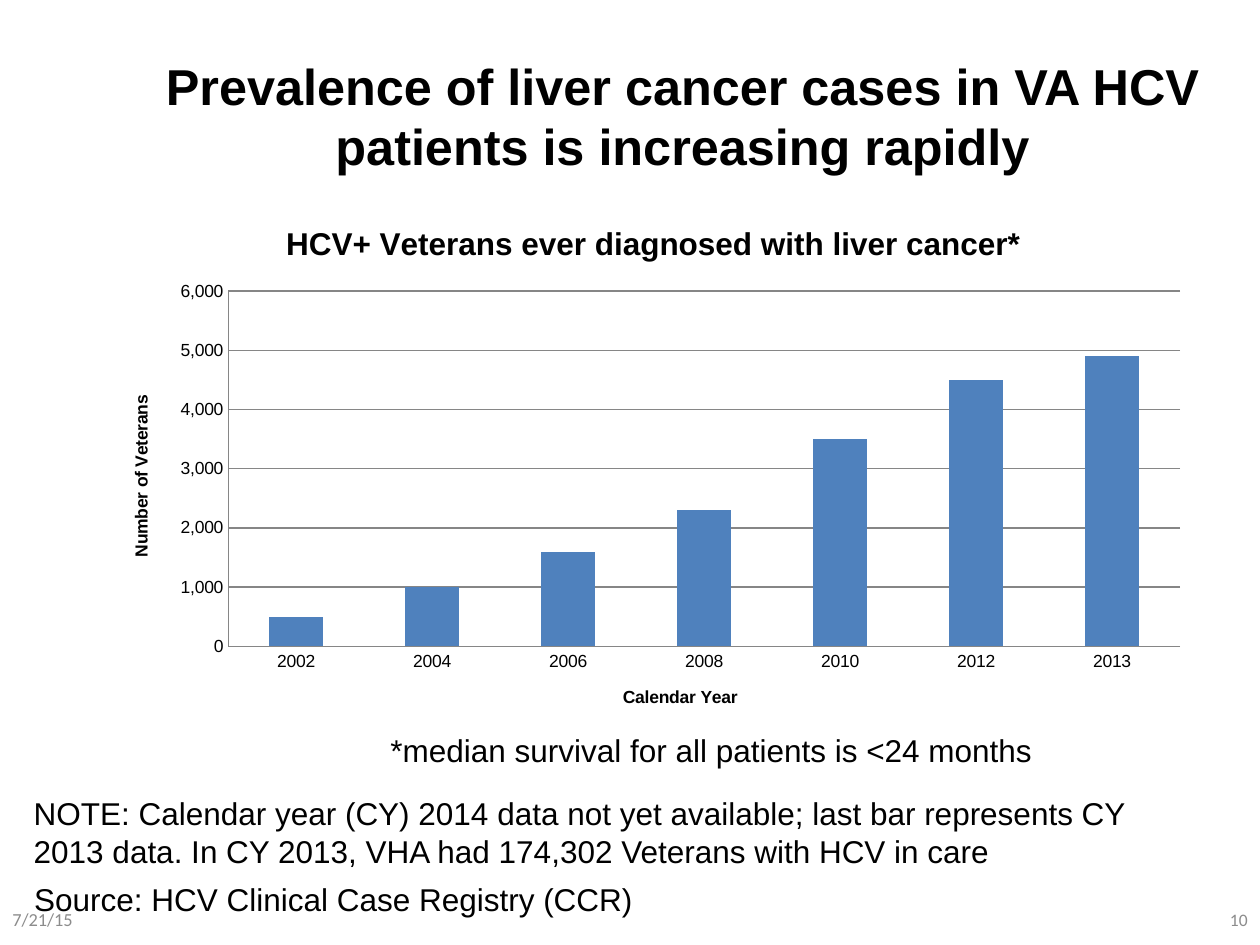
"""Build a slide on the rising prevalence of liver cancer among HCV patients."""
from lxml.etree import SubElement
from pptx import Presentation
from pptx.chart.data import CategoryChartData
from pptx.dml.color import RGBColor
from pptx.enum.chart import XL_CHART_TYPE, XL_TICK_MARK
from pptx.enum.text import MSO_ANCHOR, PP_ALIGN
from pptx.oxml.ns import qn
from pptx.util import Cm, Pt

COLORS = {"text": "000000", "footer": "8C8C8C", "bar": "4F81BD", "line": "868686"}

TOP, MIDDLE = MSO_ANCHOR.TOP, MSO_ANCHOR.MIDDLE
LEFT, CENTER, RIGHT = PP_ALIGN.LEFT, PP_ALIGN.CENTER, PP_ALIGN.RIGHT
HEADING = ("Arial", 28.8, True, "text")
BODY = ("Arial", 18, False, "text")
DATE = ("Calibri", 10.5, False, "footer")
NUMBER = ("Calibri", 10, False, "footer")

TEXTS = [
    ("Prevalence of liver cancer cases in VA HCV patients is increasing rapidly",
     (2.97, 0.84, 21.59, 2.97), HEADING, CENTER, MIDDLE),
    ("*median survival for all patients is <24 months",
     (7.62, 14.61, 13.54, 1.02), BODY, LEFT, TOP),
    ("NOTE: Calendar year (CY) 2014 data not yet available; last bar represents CY "
     "2013 data. In CY 2013, VHA had 174,302 Veterans with HCV in care",
     (0.43, 15.88, 23.93, 1.8), BODY, LEFT, TOP),
    ("10", (19.48, 18.03, 5.92, 1.02), NUMBER, RIGHT, MIDDLE),
    ("7/21/15", (0, 18.03, 5.92, 1.02), DATE, LEFT, MIDDLE),
    ("Source: HCV Clinical Case Registry (CCR)",
     (0.44, 17.62, 22.83, 1.02), BODY, LEFT, MIDDLE),
]

CHART_TITLE = "HCV+ Veterans ever diagnosed with liver cancer*"
CHART_BOX = (2.11, 4.02, 22.12, 10.8)
PLOT_BOX = (4.6, 5.87, 19.19, 7.16)
YEAR_TITLE = ("Calendar Year", (12.49, 13.76))
COUNT_TITLE = ("Number of Veterans", (2.55, 7.9))
VETERANS = {"2002": 500, "2004": 1000, "2006": 1600, "2008": 2300,
            "2010": 3500, "2012": 4500, "2013": 4900}


def color(name):
    return RGBColor.from_string(COLORS[name])


def style(font, face, size, bold, color_name):
    font.name, font.size, font.bold = face, Pt(size), bold
    font.color.rgb = color(color_name)


def add_text(slide, words, box, look, align, anchor):
    frame = slide.shapes.add_textbox(*map(Cm, box)).text_frame
    frame.word_wrap = True
    frame.vertical_anchor = anchor
    paragraph = frame.paragraphs[0]
    paragraph.text = words
    paragraph.alignment = align
    style(paragraph.font, *look)


def place(element, index, box):
    """Fix a chart part at a slide position, as shares of the chart's box."""
    left, top, width, height = CHART_BOX
    origins, spans = (left, top, 0, 0), (width, height, width, height)
    for old in element.findall(qn("c:layout")):
        element.remove(old)
    holder = SubElement(element, qn("c:layout"))
    manual = SubElement(holder, qn("c:manualLayout"))
    if len(box) == 4:
        SubElement(manual, qn("c:layoutTarget")).set("val", "inner")
    for side in "xy":
        SubElement(manual, qn(f"c:{side}Mode")).set("val", "edge")
    for side, length, origin, span in zip("xywh", box, origins, spans):
        SubElement(manual, qn(f"c:{side}")).set("val", f"{(length - origin) / span:.4f}")
    element.insert(index, holder)


def write_title(owner, words, size):
    paragraph = owner.text_frame.paragraphs[0]
    paragraph.text = words
    style(paragraph.font, "Arial", size, True, "text")


def add_veterans_chart(slide):
    data = CategoryChartData(number_format="#,##0")
    data.categories = VETERANS.keys()
    data.add_series("Series 1", VETERANS.values())
    chart = slide.shapes.add_chart(
        XL_CHART_TYPE.COLUMN_CLUSTERED, *map(Cm, CHART_BOX), data).chart
    style(chart.font, "Arial", 10, False, "text")
    chart.has_legend = False
    write_title(chart.chart_title, CHART_TITLE, 18)
    chart.chart_title.include_in_layout = False

    bars = chart.plots[0]
    bars.gap_width = 150
    bars.vary_by_categories = False
    fill = bars.series[0].format.fill
    fill.solid()
    fill.fore_color.rgb = color("bar")
    place(chart.element.find(".//" + qn("c:plotArea")), 0, PLOT_BOX)

    years, counts = chart.category_axis, chart.value_axis
    for axis, (words, corner) in ((years, YEAR_TITLE), (counts, COUNT_TITLE)):
        write_title(axis.axis_title, words, 10)
        place(axis.axis_title.element, 1, corner)
        axis.major_tick_mark = axis.minor_tick_mark = XL_TICK_MARK.NONE
        axis.format.line.color.rgb = color("line")
    counts.minimum_scale, counts.maximum_scale, counts.major_unit = 0, 6000, 1000
    counts.tick_labels.number_format = "#,##0"
    counts.tick_labels.number_format_is_linked = False
    counts.has_major_gridlines = True
    counts.major_gridlines.format.line.color.rgb = color("line")


def main():
    deck = Presentation()
    deck.slide_width, deck.slide_height = Cm(25.4), Cm(19.05)
    slide = deck.slides.add_slide(deck.slide_layouts[6])
    add_veterans_chart(slide)
    for entry in TEXTS:
        add_text(slide, *entry)
    deck.save("out.pptx")


if __name__ == "__main__":
    main()
